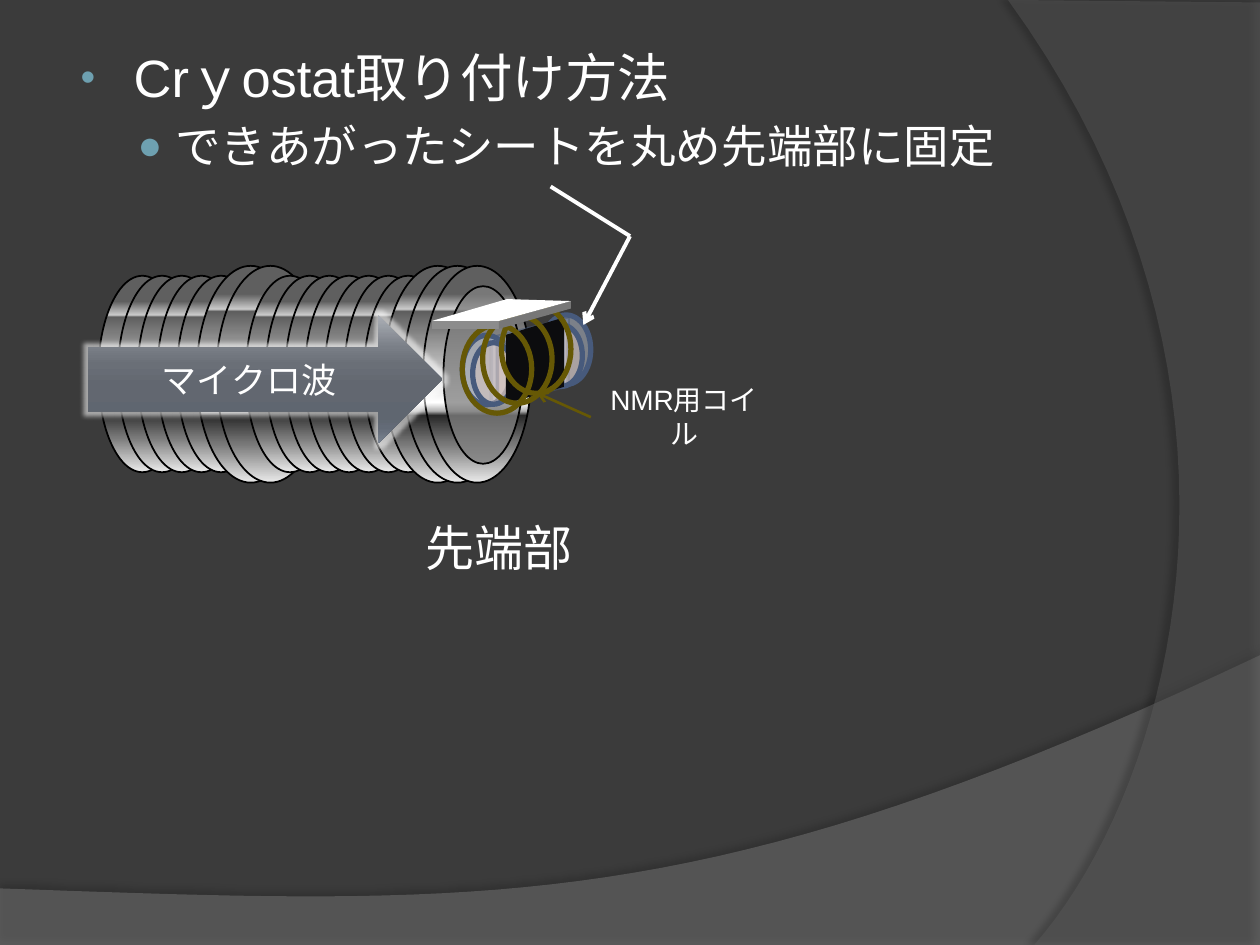
from pptx import Presentation
from pptx.dml.color import RGBColor
from pptx.enum.shapes import MSO_CONNECTOR, MSO_SHAPE
from pptx.enum.text import MSO_ANCHOR, MSO_AUTO_SIZE, PP_ALIGN
from pptx.oxml import parse_xml
from pptx.oxml.ns import nsdecls
from pptx.util import Cm, Pt

ELLIPSE, PARALLELOGRAM, RIGHT_ARROW = MSO_SHAPE.OVAL, MSO_SHAPE.PARALLELOGRAM, MSO_SHAPE.RIGHT_ARROW
STRAIGHT = MSO_CONNECTOR.STRAIGHT
MIDDLE, TOP, CENTER, LEFT = MSO_ANCHOR.MIDDLE, MSO_ANCHOR.TOP, PP_ALIGN.CENTER, PP_ALIGN.LEFT
NO_FIT = MSO_AUTO_SIZE.NONE
WHITE, BLACK, GOLD, BLUE = "FFFFFF", "000000", "665805", "475A7C"


def paint(fill, colour, alpha=100):
    """Fill with a hex colour at a percentage of opacity; None leaves it empty."""
    if colour is None:
        fill.background()
        return
    fill.solid()
    fill.fore_color.rgb = RGBColor.from_string(colour)
    if alpha < 100:
        rgb = fill._xPr.find(".//{*}srgbClr")
        rgb.append(parse_xml(f'<a:alpha {nsdecls("a")} val="{alpha * 1000}"/>'))


def append_xml(parent, tag, attributes="", content=""):
    parent.append(parse_xml(f'<a:{tag} {nsdecls("a")} {attributes}>{content}</a:{tag}>'))


prs = Presentation()
prs.slide_width, prs.slide_height = Cm(25.4), Cm(19.05)
slide = prs.slides.add_slide(prs.slide_layouts[1])
shapes = slide.shapes
paint(slide.background.fill, "3B3B3B")
title, body = slide.placeholders
title._element.getparent().remove(title._element)

# Background sweeps: straight corners, then a cubic curve back to the start
sweeps = [
    ([(0, 17.91), (0, 19.05), (25.4, 19.05), (25.4, 13.21)],
     [(14.2, 18.52), (9.93, 18.26), (0, 17.91)], "7F7F7F", 45, 35, 3.5, 270),
    ([(20.32, 0), (25.4, 0.05), (25.4, 19.05), (20.85, 19.05)],
     [(23.75, 15.72), (25.86, 7.62), (20.32, 0)], "5E5E5E", 40, 45, 4, 180),
]
for corners, bend, colour, alpha, shade, distance, direction in sweeps:
    outline = list(corners)
    control = [corners[-1]] + bend
    for step in range(1, 41):
        t = step / 40
        weights = [(1 - t) ** 3, 3 * t * (1 - t) ** 2, 3 * t * t * (1 - t), t ** 3]
        outline.append(tuple(sum(w * p[axis] for w, p in zip(weights, control)) for axis in (0, 1)))
    points = [(Cm(x), Cm(y)) for x, y in outline]
    builder = shapes.build_freeform(*points[0], scale=1.0)
    builder.add_line_segments(points[1:], close=True)
    sweep = builder.convert_to_shape()
    paint(sweep.fill, colour, alpha)
    paint(sweep.line.fill, None)
    append_xml(sweep._element.spPr, "effectLst", content=(
        f'<a:outerShdw blurRad="{Pt(4)}" dist="{Pt(distance)}" dir="{direction * 60000}">'
        f'<a:srgbClr val="{BLACK}"><a:alpha val="{shade * 1000}"/></a:srgbClr></a:outerShdw>'))

# Heading and its sub-point
body.left, body.top, body.width, body.height = Cm(1.27), Cm(0.79), Cm(22.86), Cm(16.23)
shapes._spTree.append(body._element)
heading = body.text_frame
heading.auto_size = NO_FIT
bullets = [("Crｙostat取り付け方法", 30, 1.17, -1.07, "•", 80),
           ("できあがったシートを丸め先端部に固定", 26, 2.01, -0.76, "●", 90)]
for level, (text, size, margin, indent, mark, mark_size) in enumerate(bullets):
    paragraph = heading.paragraphs[0] if level == 0 else heading.add_paragraph()
    paragraph.text, paragraph.level = text, level
    paragraph.space_before = Pt(size * 0.2)
    font = paragraph.runs[0].font
    for name, value in {"size": Pt(size), "name": "Arial"}.items():
        setattr(font, name, value)
    paint(font.fill, WHITE)
    properties = paragraph._p.get_or_add_pPr()
    properties.set("marL", str(Cm(margin)))
    properties.set("indent", str(Cm(indent)))
    append_xml(properties, "buClr", content='<a:srgbClr val="6EA0B0"/>')
    append_xml(properties, "buSzPct", f'val="{mark_size * 1000}"')
    append_xml(properties, "buFont", 'typeface="Arial"')
    append_xml(properties, "buChar", f'char="{mark}"')

# Corrugated metal tube: rings at one pitch, small or large
METAL = ((13, "5F5F5F"), (20, "CBCBCB"), (21, "5F5F5F"), (63, "FFFFFF"),
         (67, "B2B2B2"), (69, "292929"), (82, "777777"), (100, "EAEAEA"))
STEEL = ((0, "ACB0B7"), (25, "7A7F87"), (38, "6A6F77"), (55, "626770"),
         (80, "5F6670"), (88, "636B77"), (100, "7B8492"))
SMALL, LARGE = (5.56, 1.78, 3.96), (5.36, 2.18, 4.37)
pitch = 6.55 / 16.5
# Every part: kind, box, fill, opacity, line, line width, line opacity
parts = []
for first, count, (top, width, height) in [(0, 5, SMALL), (5, 2, LARGE), (7.5, 7, SMALL), (14.5, 3, LARGE)]:
    for ring in range(count):
        left = 1.98 + (first + ring) * pitch
        parts.append((ELLIPSE, left, top, width, height, METAL, 100, BLACK, 1, 100))

# Tube end, sample holder, coil and microwave arrow
parts += [
    (ELLIPSE, 8.94, 5.77, 1.6, 3.58, "808080", 76, BLACK, 1, 100),
    (ELLIPSE, 10.92, 6.35, 0.99, 1.4, "BFC9DB", 49, BLUE, 3, 100),
    (PARALLELOGRAM, 9.83, 6.5, 1.7, 1.55, "BFC9DB", 56, BLUE, 2, 51),
    (ELLIPSE, 9.32, 6.76, 0.99, 1.4, "BFC9DB", 50, BLUE, 3, 100),
    (ELLIPSE, 10.9, 6.55, 0.84, 1.24, "DBC6BE", 49, BLUE, 3, 100),
    (PARALLELOGRAM, 9.93, 6.71, 1.52, 1.32, "DBC6BE", 49, BLUE, 2, 51),
    (ELLIPSE, 9.53, 6.91, 0.84, 1.24, "DBC6BE", 49, BLUE, 3, 100),
    "sheet",
    (ELLIPSE, 9.73, 6.35, 1.4, 1.78, None, 100, GOLD, 3, 100),
    (ELLIPSE, 10.11, 6.15, 1.4, 1.78, None, 100, GOLD, 3, 100),
    (ELLIPSE, 9.32, 6.55, 1.4, 1.78, None, 100, GOLD, 3, 100),
    "plate",
    (RIGHT_ARROW, 1.78, 6.35, 7.14, 2.59, STEEL, 100, None, 1, 100),
]
faces = {
    "sheet": [("0C0C0E", [(10.2, 6.75), (11.37, 6.4), (11.37, 7.8), (10.2, 8.14)])],
    "plate": [("8C8C8C", [(8.71, 6.47), (10.06, 6.47), (10.06, 6.63), (8.71, 6.63)]),
              ("777777", [(10.06, 6.47), (11.51, 6.07), (11.51, 6.22), (10.06, 6.63)]),
              (WHITE, [(8.71, 6.47), (10.22, 6.03), (11.51, 6.07), (10.06, 6.47)])],
}
for part in parts:
    if part in faces:
        for colour, corners in faces[part]:
            points = [(Cm(x), Cm(y)) for x, y in corners]
            builder = shapes.build_freeform(*points[0], scale=1.0)
            builder.add_line_segments(points[1:], close=True)
            face = builder.convert_to_shape()
            paint(face.fill, colour)
            paint(face.line.fill, None)
            face.shadow.inherit = False
        continue
    kind, left, top, width, height, fill, alpha, line, line_width, line_alpha = part
    piece = shapes.add_shape(kind, Cm(left), Cm(top), Cm(width), Cm(height))
    if isinstance(fill, tuple):
        stops = "".join(f'<a:gs pos="{at * 1000}"><a:srgbClr val="{colour}"/></a:gs>' for at, colour in fill)
        append_xml(piece._element.spPr, "gradFill", 'rotWithShape="1"',
                   f'<a:gsLst>{stops}</a:gsLst><a:lin ang="5400000" scaled="0"/>')
    else:
        paint(piece.fill, fill, alpha)
    paint(piece.line.fill, line, line_alpha)
    if line:
        piece.line.width = Pt(line_width)
    if kind == PARALLELOGRAM:
        piece.rotation = 90
        piece._element.spPr.find("{*}xfrm").set("flipH", "1")
    piece.shadow.inherit = False
microwave = piece
append_xml(microwave._element.spPr.find("{*}effectLst"), "glow", f'rad="{Pt(5)}"',
           f'<a:srgbClr val="{WHITE}"><a:alpha val="55000"/></a:srgbClr>')

# Pointers
for x1, y1, x2, y2, colour, width, pointed in [
        (12.7, 4.76, 11.76, 6.55, WHITE, 2.25, True),
        (12.7, 4.76, 11.1, 3.76, WHITE, 2.25, False),
        (11.91, 8.41, 10.82, 7.92, GOLD, 1.5, True)]:
    pointer = shapes.add_connector(STRAIGHT, Cm(x1), Cm(y1), Cm(x2), Cm(y2))
    paint(pointer.line.fill, colour)
    pointer.line.width = Pt(width)
    if pointed:
        append_xml(pointer._element.spPr.find("{*}ln"), "tailEnd", 'type="arrow"')
    append_xml(pointer._element.spPr, "effectLst")

# Labels
coil_label = shapes.add_textbox(Cm(11.91), Cm(7.92), Cm(3.76), Cm(0.94))
tip_label = shapes.add_textbox(Cm(8.33), Cm(10.31), Cm(3.51), Cm(1.45))
for label, text, size, anchor, alignment, wrap in [
        (coil_label, "NMR用コイル", 16, MIDDLE, CENTER, True),
        (tip_label, "先端部", 28, TOP, LEFT, False),
        (microwave, "マイクロ波", 20, MIDDLE, CENTER, True)]:
    frame = label.text_frame
    for name, value in {"text": text, "vertical_anchor": anchor, "word_wrap": wrap}.items():
        setattr(frame, name, value)
    paragraph = frame.paragraphs[0]
    paragraph.alignment = alignment
    font = paragraph.runs[0].font
    for name, value in {"size": Pt(size), "name": "Arial"}.items():
        setattr(font, name, value)
    paint(font.fill, WHITE)

prs.save("out.pptx")
